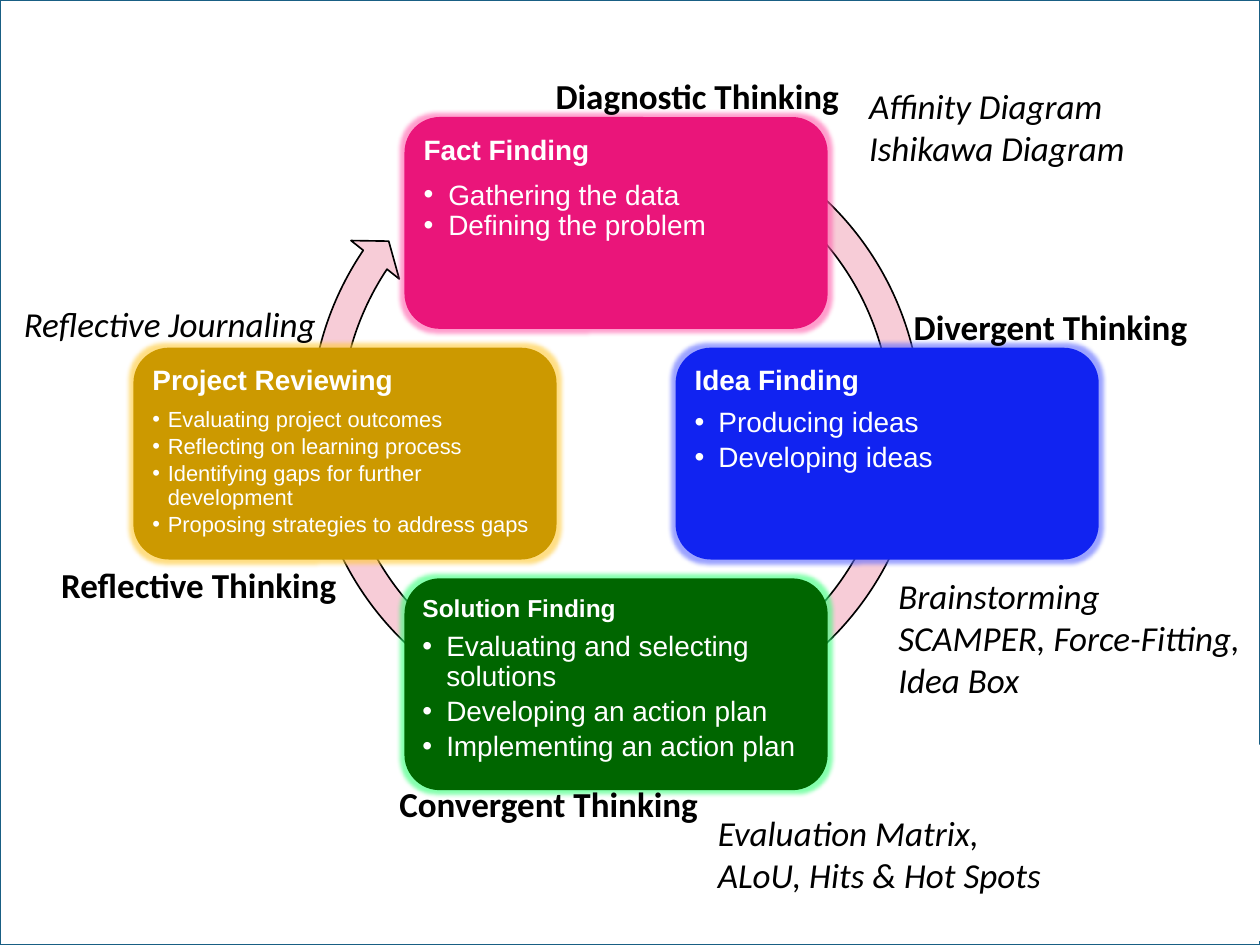
from lxml.etree import SubElement
from pptx import Presentation
from pptx.dml.color import RGBColor
from pptx.enum.shapes import MSO_SHAPE as Shape
from pptx.enum.text import MSO_ANCHOR as Anchor, MSO_AUTO_SIZE as AutoSize, PP_ALIGN as Align
from pptx.oxml.ns import qn
from pptx.util import Cm, Pt

PAGE_W, PAGE_H = 25.4, 19.05
CARD_W, CARD_H = 8.53, 4.27

# Cards clockwise from the top: column, row, fill, glow, heading size, bullet size, indent, lines
CARDS = [
    (0, -1, "EA157A", "FF5CAB", 16, 16, 0.5, ["Fact Finding", "Gathering the data", "Defining the problem"]),
    (1, 0, "1123F1", "5A66FF", 16, 16, 0.48, ["Idea Finding", "Producing ideas", "Developing ideas"]),
    (0, 1, "006600", "33FF77", 14, 16, 0.48, ["Solution Finding", "Evaluating and selecting solutions",
                                              "Developing an action plan", "Implementing an action plan"]),
    (-1, 0, "CC9900", "FFC933", 16, 12.5, 0.31, ["Project Reviewing", "Evaluating project outcomes",
                                                 "Reflecting on learning process",
                                                 "Identifying gaps for further development",
                                                 "Proposing strategies to address gaps"]),
]
THINKING = [
    ("Diagnostic Thinking", (10.64, 1.22, 8.15, 1.42), Align.LEFT),
    ("Divergent Thinking", (17.86, 5.87, 7.32, 1.42), Align.LEFT),
    ("Convergent Thinking", (7.49, 15.49, 11.48, 1.42), Align.LEFT),
    ("Reflective Thinking", (-0.48, 11.07, 7.82, 1.42), Align.RIGHT),
]
TOOLS = [
    (["Affinity Diagram", "Ishikawa Diagram"], (17.27, 1.57, 8.13, 1.96)),
    (["Brainstorming", "SCAMPER, Force-Fitting,", "Idea Box"], (17.86, 11.46, 7.54, 2.82)),
    (["Reflective Journaling"], (0.23, 5.97, 7.01, 1.12)),
    (["Evaluation Matrix,", "ALoU, Hits & Hot Spots"], (14.22, 16.23, 7.14, 1.96)),
]


def color(value):
    return RGBColor.from_string(value)


def add_figure(page, kind, box, fill, line=None, width=1):
    figure = page.shapes.add_shape(kind, *map(Cm, box))
    figure.shadow.inherit = False
    figure.fill.solid()
    figure.fill.fore_color.rgb = color(fill)
    if line:
        figure.line.color.rgb = color(line)
        figure.line.width = Pt(width)
    else:
        figure.line.fill.background()
    return figure


def add_glow(figure, value, radius=5, alpha=60):
    effects = figure._element.spPr.find(qn("a:effectLst"))
    glow = SubElement(effects, qn("a:glow"), rad=str(Pt(radius)))
    tint = SubElement(glow, qn("a:srgbClr"), val=value)
    SubElement(tint, qn("a:alpha"), val=str(alpha * 1000))


def write(para, text, size=20, font="Calibri", ink="000000", bold=False, italic=False, align=Align.LEFT):
    para.alignment = align
    span = para.add_run()
    span.text = text
    span.font.size = Pt(size)
    span.font.name = font
    span.font.color.rgb = color(ink)
    span.font.bold = bold
    span.font.italic = italic


def add_bullet(para, indent):
    props = para._p.get_or_add_pPr()
    props.set("marL", str(Cm(indent)))
    props.set("indent", str(-Cm(indent)))
    SubElement(props, qn("a:buFont"), typeface="Arial")
    SubElement(props, qn("a:buChar"), char="•")


def set_insets(frame, across, down):
    frame.margin_left = frame.margin_right = Cm(across)
    frame.margin_top = frame.margin_bottom = Cm(down)


def add_label(page, lines, box, insets=(0.25, 0.13), **style):
    label = page.shapes.add_textbox(*map(Cm, box))
    frame = label.text_frame
    frame.word_wrap = True
    frame.auto_size = AutoSize.SHAPE_TO_FIT_TEXT
    set_insets(frame, *insets)
    for index, line in enumerate(lines):
        para = frame.add_paragraph() if index else frame.paragraphs[0]
        write(para, line, **style)


def add_card(page, box, fill, glow, heading_size, bullet_size, indent, lines):
    card = add_figure(page, Shape.ROUNDED_RECTANGLE, box, fill)
    add_glow(card, glow)
    frame = card.text_frame
    frame.word_wrap = True
    frame.vertical_anchor = Anchor.TOP
    inset = heading_size * 0.011
    set_insets(frame, inset, inset)
    for index, line in enumerate(lines):
        heading = index == 0
        size = heading_size if heading else bullet_size
        # The first bullet of the top card sits close to the next one
        tight = line == "Gathering the data"
        para = frame.paragraphs[0] if heading else frame.add_paragraph()
        para.line_spacing = 1.0 if tight else 0.9
        para.space_before = Pt(0)
        para.space_after = Pt(0 if tight else round(size * (0.4 if heading else 0.17), 1))
        write(para, line, size=size, font="Arial", ink="FFFFFF", bold=heading)
        if not heading:
            add_bullet(para, indent)


def add_cycle(page, box):
    left, top, width, height = box
    center_x, center_y = left + width / 2, top + height / 2
    # Ring arrow behind the cards
    ring = 12.95
    arrow = add_figure(page, Shape.CIRCULAR_ARROW,
                       (center_x - ring / 2, center_y - 0.64 - ring / 2, ring, ring), "F7CCD7", "000000", 0.94)
    for index, value in enumerate([0.047, 2.729, 128.36, 180.277, 0.048]):
        arrow.adjustments[index] = value
    # Cards on the four sides
    step_x, step_y = (width - CARD_W) / 2, (height - CARD_H) / 2
    for column, row, *content in CARDS:
        place = (center_x + column * step_x - CARD_W / 2, center_y + row * step_y - CARD_H / 2, CARD_W, CARD_H)
        add_card(page, place, *content)


def main():
    deck = Presentation()
    deck.slide_width, deck.slide_height = Cm(PAGE_W), Cm(PAGE_H)
    page = deck.slides.add_slide(deck.slide_layouts[6])
    # Page frame, with its lower right corner cleared
    add_figure(page, Shape.RECTANGLE, (0, 0, PAGE_W, PAGE_H), "FFFFFF", "195F84", 1.25)
    add_figure(page, Shape.RECTANGLE, (20.04, 15.01, 5.36, 3.96), "FFFFFF")
    add_cycle(page, (2.69, 2.36, 19.46, 13.57))
    # Kinds of thinking and their tools
    for text, box, align in THINKING:
        add_label(page, [text], box, insets=(0.56, 0.28), bold=True, align=align)
    for lines, box in TOOLS:
        add_label(page, lines, box, italic=True)
    deck.save("out.pptx")


if __name__ == "__main__":
    main()
